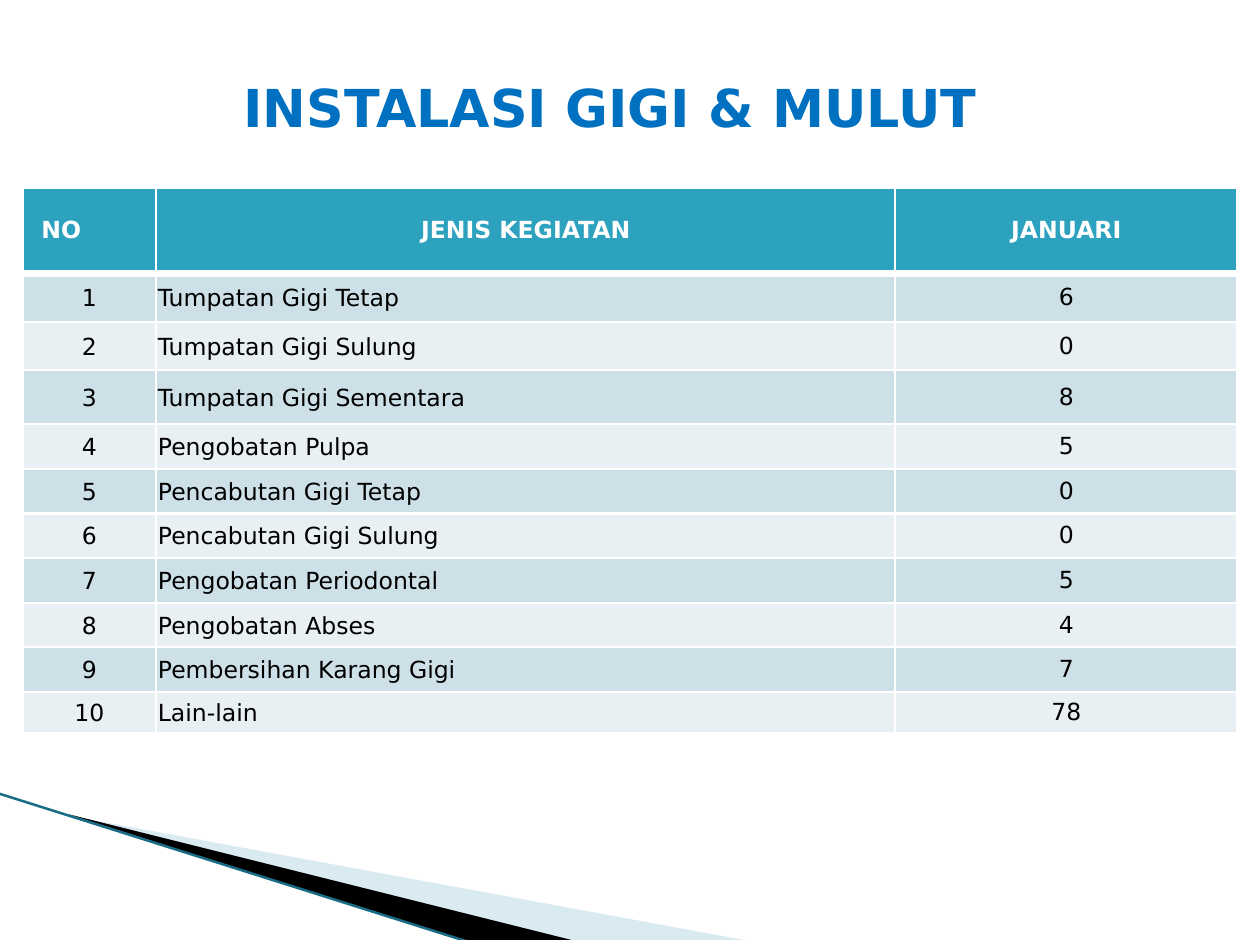
from lxml import etree
from pptx import Presentation
from pptx import util as u
from pptx.dml.color import RGBColor
from pptx.enum import shapes, text
from pptx.oxml import parse_xml
from pptx.oxml.ns import nsdecls, qn

WHITE = RGBColor(0xFF, 0xFF, 0xFF)
BLACK = RGBColor(0x00, 0x00, 0x00)
BLUE = RGBColor(0x00, 0x70, 0xC0)
TEAL = RGBColor(0x2D, 0xA2, 0xBF)
DARK_TEAL = RGBColor(0x1A, 0x6C, 0x86)
PALE_BLUE = RGBColor(0xA0, 0xCB, 0xDC)
ODD_ROW = RGBColor(0xCD, 0xE0, 0xE8)
EVEN_ROW = RGBColor(0xE8, 0xF0, 0xF4)
FONT = "DejaVu Sans"

HEADINGS = ("NO", "JENIS KEGIATAN", "JANUARI")
ACTIVITIES = (
    ("Tumpatan Gigi Tetap", 6),
    ("Tumpatan Gigi Sulung", 0),
    ("Tumpatan Gigi Sementara", 8),
    ("Pengobatan Pulpa", 5),
    ("Pencabutan Gigi Tetap", 0),
    ("Pencabutan Gigi Sulung", 0),
    ("Pengobatan Periodontal", 5),
    ("Pengobatan Abses", 4),
    ("Pembersihan Karang Gigi", 7),
    ("Lain-lain", 78),
)
COLUMN_WIDTHS = (0.71, 3.93, 1.82)
ROW_HEIGHTS = (0.46, 0.26, 0.26, 0.29) + (0.24,) * 6 + (0.22,)
HEADER_INSETS = (0.1, 0.05, 0.1, 0.05)
LABEL_INSETS = (0.01, 0.01, 0.01, 0)
VALUE_INSETS = (0, 0, 0, 0)


def style_paragraph(paragraph, size, color, bold, align):
    paragraph.alignment = align
    font = paragraph.font
    font.name, font.size, font.bold = FONT, u.Pt(size), bold
    font.color.rgb = color


def set_frame(wedge, left, top, width, height):
    shift_x, shift_y = wedge.left - left, wedge.top - top
    outline = wedge._element.spPr.find(".//" + qn("a:path"))
    outline.set("w", str(width))
    outline.set("h", str(height))
    for point in outline.iter(qn("a:pt")):
        point.set("x", str(int(point.get("x")) + shift_x))
        point.set("y", str(int(point.get("y")) + shift_y))
    wedge.left, wedge.top, wedge.width, wedge.height = left, top, width, height


def add_wedge(slide, left, top, points, frame, color, opacity=100):
    corners = [(u.Inches(left + x), u.Inches(top + y)) for x, y in points]
    builder = slide.shapes.build_freeform(*corners[0])
    builder.add_line_segments(corners[1:], close=True)
    wedge = builder.convert_to_shape()
    x, y, width, height = frame
    set_frame(wedge, u.Inches(left + x), u.Inches(top + y), u.Inches(width), u.Inches(height))
    wedge.shadow.inherit = False
    wedge.fill.solid()
    wedge.fill.fore_color.rgb = color
    wedge.line.fill.background()
    if opacity < 100:
        tint = wedge._element.spPr.find(".//" + qn("a:srgbClr"))
        etree.SubElement(tint, qn("a:alpha"), val=str(opacity * 1000))


def add_corner_decoration(slide, left, top, height):
    add_wedge(slide, left, top, ((0.37, 0.12), (4.01, height), (3.06, height)),
              (0.52, -0.57, 2.79, 1.05), PALE_BLUE, 40)
    add_wedge(slide, left, top, ((0.36, 0.11), (3.08, height), (2.49, height)),
              (-0.04, 0, 2.78, 0.61), BLACK)
    edge = slide.shapes.add_connector(
        shapes.MSO_CONNECTOR.STRAIGHT,
        u.Inches(left - 0.01), u.Inches(top), u.Inches(left + 2.49), u.Inches(top + height))
    edge.line.color.rgb = DARK_TEAL
    edge.line.width = u.Pt(0.95)
    etree.SubElement(edge._element.spPr, qn("a:effectLst"))


def set_borders(cell, top, bottom):
    properties = cell._tc.get_or_add_tcPr()
    for index, (side, width) in enumerate((("L", 1), ("R", 1), ("T", top), ("B", bottom))):
        properties.insert(index, parse_xml(
            f'<a:ln{side} {nsdecls("a")} w="{u.Pt(width)}"><a:solidFill>'
            f'<a:srgbClr val="{WHITE}"/></a:solidFill></a:ln{side}>'))


def fill_cell(cell, content, insets, fill, color, bold, align):
    cell.text = str(content)
    cell.vertical_anchor = text.MSO_ANCHOR.MIDDLE
    cell.margin_left, cell.margin_top, cell.margin_right, cell.margin_bottom = map(u.Inches, insets)
    cell.fill.solid()
    cell.fill.fore_color.rgb = fill
    style_paragraph(cell.text_frame.paragraphs[0], 9, color, bold, align)


def add_activity_table(slide, left, top, width, height):
    table = slide.shapes.add_table(
        len(ROW_HEIGHTS), len(COLUMN_WIDTHS),
        u.Inches(left), u.Inches(top), u.Inches(width), u.Inches(height)).table
    for column, share in zip(table.columns, COLUMN_WIDTHS):
        column.width = u.Inches(width * share / sum(COLUMN_WIDTHS))
    for row, share in zip(table.rows, ROW_HEIGHTS):
        row.height = u.Inches(height * share / sum(ROW_HEIGHTS))

    start, center = text.PP_ALIGN.LEFT, text.PP_ALIGN.CENTER
    for column, heading in enumerate(HEADINGS):
        cell = table.cell(0, column)
        fill_cell(cell, heading, HEADER_INSETS, TEAL, WHITE, True, center if column else start)
        set_borders(cell, 1, 3)
    for number, (activity, count) in enumerate(ACTIVITIES, 1):
        fill = ODD_ROW if number % 2 else EVEN_ROW
        entries = ((number, LABEL_INSETS, center),
                   (activity, LABEL_INSETS, start),
                   (count, VALUE_INSETS, center))
        for column, (content, insets, align) in enumerate(entries):
            cell = table.cell(number, column)
            fill_cell(cell, content, insets, fill, BLACK, False, align)
            set_borders(cell, 3 if number == 1 else 1, 1)


def add_title(slide, left, top, width, height):
    title = slide.shapes.add_textbox(
        u.Inches(left), u.Inches(top), u.Inches(width), u.Inches(height))
    frame = title.text_frame
    frame.word_wrap = True
    frame.vertical_anchor = text.MSO_ANCHOR.MIDDLE
    frame.margin_left = frame.margin_right = u.Inches(0.06)
    frame.margin_top = frame.margin_bottom = u.Inches(0.03)
    frame.text = "INSTALASI GIGI & MULUT"
    style_paragraph(frame.paragraphs[0], 20, BLUE, True, text.PP_ALIGN.CENTER)


def main():
    deck = Presentation()
    deck.slide_width, deck.slide_height = u.Inches(6.7), u.Inches(5)
    slide = deck.slides.add_slide(deck.slide_layouts[6])
    add_corner_decoration(slide, 0, 4.22, 0.79)
    add_activity_table(slide, 0.12, 1, 6.46, 2.9)
    add_title(slide, 0.2, 0.29, 6.09, 0.55)
    deck.save("out.pptx")


if __name__ == "__main__":
    main()
